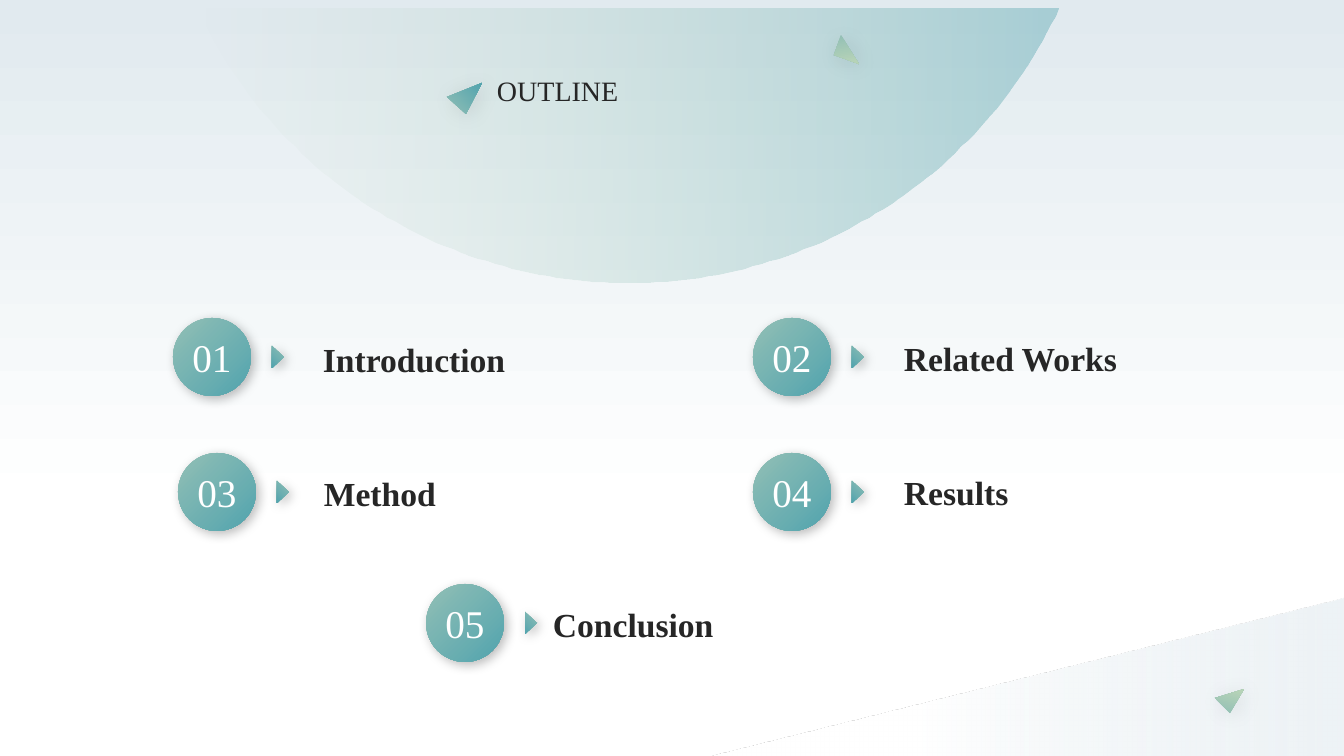
from dataclasses import dataclass
from math import asin, cos, pi, sin

from lxml.etree import SubElement
from pptx import Presentation
from pptx.dml.color import RGBColor as Rgb
from pptx.enum.shapes import MSO_SHAPE as Preset
from pptx.enum.text import MSO_ANCHOR as Anchor, MSO_AUTO_SIZE as AutoSize, PP_ALIGN as Align
from pptx.oxml.ns import qn
from pptx.util import Emu, Pt

SCALE = 12192000 / 1344


@dataclass(frozen=True)
class Theme:
    """Colours, gradients, shadows and type of the slide."""
    font: str = "Times New Roman"
    ink: str = "262626"
    white: str = "FFFFFF"
    title_size: int = 20
    label_size: int = 24
    number_size: int = 28
    sky: tuple = ((0, "E1EAEF", 100), (67, "FFFFFF", 100))
    slope: tuple = ((0, "E1EAEF", 57), (67, "FFFFFF", 100))
    bowl: tuple = ((0, "B6D3B7", 0), (100, "77B6BF", 55))
    teal: tuple = ((0, "92BFB5", 100), (100, "52A4AE", 100))
    leaf: tuple = ((0, "92BFB5", 100), (92, "B6D3B7", 100))
    badge_shadow: tuple = (25, 8)
    plane_shadow: tuple = (10, 15)


THEME = Theme()


def px(length):
    """Turn px into EMU."""
    return Emu(round(length * SCALE))


def paint(shape, stops, angle, shadow=None):
    """Give a shape a clockwise linear gradient, no line and an optional shadow."""
    shape.shadow.inherit = False
    shape.line.fill.background()
    shape.fill.gradient()
    shape.fill.gradient_angle = (360 - angle) % 360
    for stop, (position, color, _) in zip(shape.fill.gradient_stops, stops):
        stop.position = position / 100
        stop.color.rgb = Rgb.from_string(color)
    properties = shape._element.spPr
    for color_node, (_, _, opacity) in zip(properties.iter(qn("a:srgbClr")), stops):
        if opacity < 100:
            SubElement(color_node, qn("a:alpha"), val=str(opacity * 1000))
    if shadow:
        opacity, blur = shadow
        outer = SubElement(properties.find(qn("a:effectLst")), qn("a:outerShdw"),
                           blurRad=str(Pt(blur)), dist=str(Pt(3)), dir="2700000",
                           algn="tl", rotWithShape="0")
        black = SubElement(outer, qn("a:srgbClr"), val="000000")
        SubElement(black, qn("a:alpha"), val=str(opacity * 1000))


def add_preset(shapes, preset, box, stops, angle, shadow=None):
    """Add a painted preset shape."""
    shape = shapes.add_shape(preset, *map(px, box))
    paint(shape, stops, angle, shadow)
    return shape


def add_outline(shapes, points, stops, angle, shadow=None):
    """Add a painted closed polygon."""
    builder = shapes.build_freeform(*points[0], scale=SCALE)
    builder.add_line_segments(points[1:], close=True)
    paint(builder.convert_to_shape(), stops, angle, shadow)


def write(frame, text, size, color, bold=False, align=Align.LEFT):
    """Write one styled run into a text frame."""
    paragraph = frame.paragraphs[0]
    paragraph.alignment = align
    run = paragraph.add_run()
    run.text = text
    run.font.name = THEME.font
    run.font.size = Pt(size)
    run.font.bold = bold
    run.font.color.rgb = Rgb.from_string(color)


def add_text(shapes, box, text, size, bold=False, wrap=False):
    """Add a text box that fits its text."""
    frame = shapes.add_textbox(*map(px, box)).text_frame
    frame.word_wrap = wrap
    frame.auto_size = AutoSize.SHAPE_TO_FIT_TEXT
    write(frame, text, size, THEME.ink, bold)


def add_badge(shapes, left, top, number):
    """Add a numbered disc with its pointer as one group."""
    badge = shapes.add_group_shape().shapes
    disc = add_preset(badge, Preset.OVAL, (left, top, 78, 78),
                      THEME.teal, 45, THEME.badge_shadow)
    frame = disc.text_frame
    frame.margin_left = frame.margin_right = frame.margin_top = frame.margin_bottom = 0
    frame.vertical_anchor = Anchor.MIDDLE
    frame.word_wrap = False
    write(frame, f"{number:02}", THEME.number_size, THEME.white, align=Align.CENTER)
    pointer = add_preset(badge, Preset.ISOSCELES_TRIANGLE, (left + 94, top + 33, 22, 12),
                         THEME.teal, 45, THEME.badge_shadow)
    pointer.rotation = 90


def bowl_points(center_x=628, center_y=-192, radius=475, rim=9, steps=120):
    """Return the part of a circle that lies below its rim."""
    start = asin((rim - center_y) / radius)
    angles = [start + (pi - 2 * start) * step / steps for step in range(steps + 1)]
    return [(center_x + radius * cos(a), center_y + radius * sin(a)) for a in angles]


def add_backdrop(shapes):
    """Add the sky, the corner slope and the bowl."""
    add_preset(shapes, Preset.RECTANGLE, (0, 0, 1344, 756), THEME.sky, 90)
    slope = add_preset(shapes, Preset.ISOSCELES_TRIANGLE, (704, 598, 642, 159),
                       THEME.slope, 180)
    slope.adjustments[0] = 1
    add_outline(shapes, bowl_points(), THEME.bowl, 0)


def main():
    """Build the outline slide."""
    deck = Presentation()
    deck.slide_width, deck.slide_height = px(1344), px(756)
    shapes = deck.slides.add_slide(deck.slide_layouts[6]).shapes
    add_backdrop(shapes)
    add_text(shapes, (487, 69, 281, 54), "OUTLINE", THEME.title_size, wrap=True)

    planes = (
        (((466, 114), (447, 97), (482, 83)), THEME.teal, 317),
        (((841, 35), (859, 64), (834, 55)), THEME.leaf, 80),
        (((1230, 713), (1215, 698), (1244, 689)), THEME.leaf, 285),
    )
    for points, stops, angle in planes:
        add_outline(shapes, points, stops, angle, THEME.plane_shadow)

    topics = (
        ("Introduction", (173, 318), (313, 334, 205)),
        ("Related Works", (753, 318), (894, 333, 236)),
        ("Method", (178, 453), (314, 468, 133)),
        ("Results", (753, 453), (894, 467, 126)),
        ("Conclusion", (426, 584), (543, 599, 182)),
    )
    for number, (topic, corner, label) in enumerate(topics, start=1):
        add_badge(shapes, *corner, number)
        add_text(shapes, (*label, 50), topic, THEME.label_size, bold=True)
    deck.save("out.pptx")


if __name__ == "__main__":
    main()
